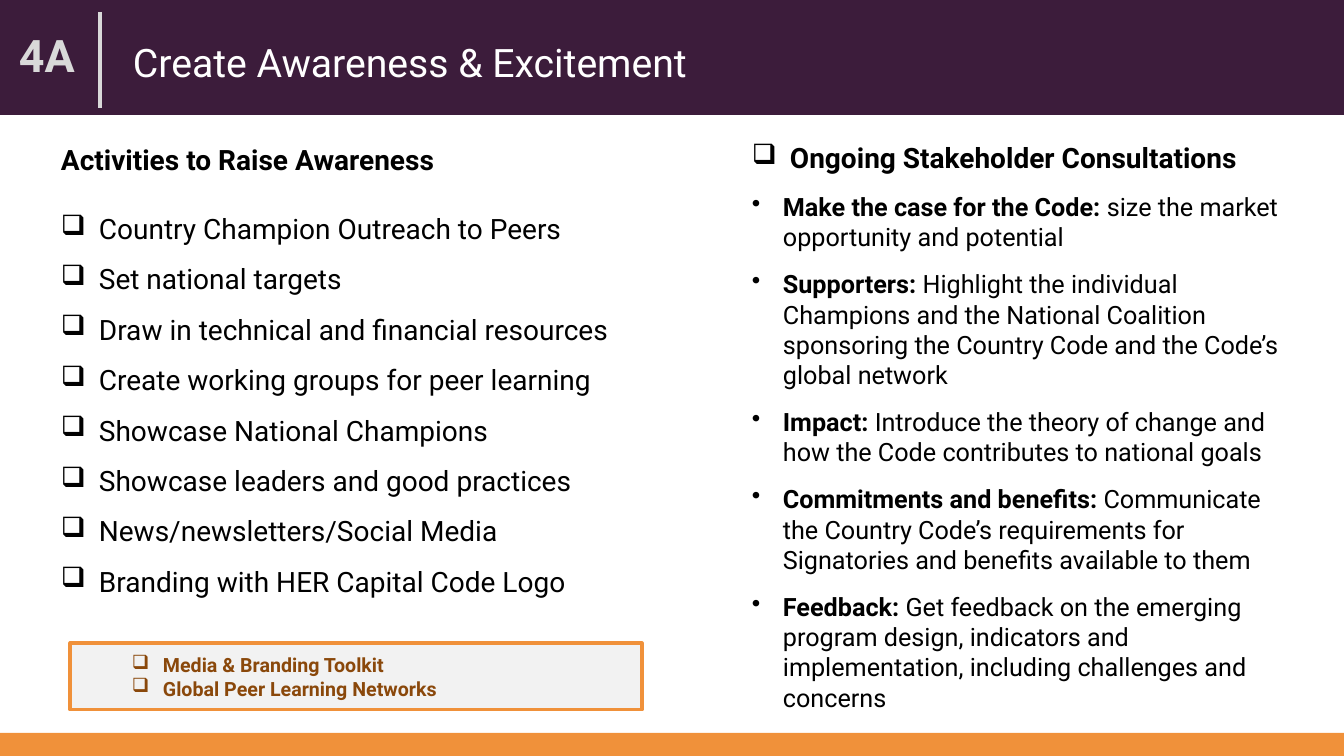
import pptx
import pptx.dml.color
import pptx.enum.shapes
import pptx.enum.text
import pptx.oxml.ns
import pptx.util
from lxml import etree

EMU_PER_PX = 914400 / 100.8
WHITE, BLACK, PLUM, ORANGE = "FFFFFF", "000000", "3C1C3B", "F0913A"
PALE, SILVER, BROWN = "F2F2F2", "D9D9D9", "8A480B"
CHECKBOX, DOT = "❑", "•"


def px(*lengths):
    return [pptx.util.Emu(round(n * EMU_PER_PX)) for n in lengths]


def write(frame, text, bold_lead="", size=20, color=BLACK, bold=False,
          bullet=None, indent=0, hanging=0, before=0, line_spacing=None):
    """Add one paragraph, filling the frame's first one while it is empty."""
    frame.word_wrap = True
    paragraph = frame.paragraphs[0]
    if paragraph.runs:
        paragraph = frame.add_paragraph()
    paragraph.alignment = pptx.enum.text.PP_ALIGN.LEFT
    paragraph.space_before = pptx.util.Pt(before)
    if line_spacing:
        paragraph.line_spacing = line_spacing
    left, hang = px(indent, hanging)
    properties = paragraph._p.get_or_add_pPr()
    properties.set("marL", str(left))
    properties.set("indent", str(-hang))
    if bullet:
        mark = etree.SubElement(properties, pptx.oxml.ns.qn("a:buChar"))
        mark.set("char", bullet)
    for words, is_bold in ((bold_lead, True), (text, bold)):
        if words:
            run = paragraph.add_run()
            run.text = words
            run.font.name = "Roboto"
            run.font.size = pptx.util.Pt(size)
            run.font.bold = is_bold
            run.font.color.rgb = pptx.dml.color.RGBColor.from_string(color)


deck = pptx.Presentation()
deck.slide_width, deck.slide_height = px(1344, 756)
slide = deck.slides.add_slide(deck.slide_layouts[6])
shapes = slide.shapes

# Footer band, header band and toolkit box
panels = []
for box, fill, outline in (
    ((0, 733, 1344, 23), ORANGE, None),
    ((0, 0, 1344, 115), PLUM, None),
    ((70, 643, 572, 67), PALE, ORANGE),
):
    panel = shapes.add_shape(pptx.enum.shapes.MSO_SHAPE.RECTANGLE, *px(*box))
    panel.shadow.inherit = False
    panel.fill.solid()
    panel.fill.fore_color.rgb = pptx.dml.color.RGBColor.from_string(fill)
    if outline:
        panel.line.color.rgb = pptx.dml.color.RGBColor.from_string(outline)
        panel.line.width = pptx.util.Pt(2.25)
    else:
        panel.line.fill.background()
    panels.append(panel)

toolkit = panels[-1].text_frame
toolkit.vertical_anchor = pptx.enum.text.MSO_ANCHOR.MIDDLE
for resource in ("Media & Branding Toolkit", "Global Peer Learning Networks"):
    write(toolkit, resource, size=14, color=BROWN, bold=True,
          bullet=CHECKBOX, indent=83, hanging=31)

# Header
title = shapes.add_textbox(*px(111, 0, 1214, 115)).text_frame
title.vertical_anchor = pptx.enum.text.MSO_ANCHOR.MIDDLE
write(title, "Create Awareness & Excitement", size=28, color=WHITE,
      indent=12, line_spacing=1.2)

section = shapes.add_textbox(*px(9, 23, 206, 65)).text_frame
write(section, "4A", size=32, color=SILVER, bold=True)

divider = shapes.add_connector(pptx.enum.shapes.MSO_CONNECTOR.STRAIGHT,
                               *px(100, 12, 100, 108))
divider.line.color.rgb = pptx.dml.color.RGBColor.from_string(SILVER)
divider.line.width = pptx.util.Pt(2.25)
etree.SubElement(divider._element.spPr, pptx.oxml.ns.qn("a:effectLst"))

# Left column
activities = shapes.add_textbox(*px(51, 138, 679, 482)).text_frame
write(activities, "Activities to Raise Awareness", bold=True, before=12)
for number, activity in enumerate((
    "Country Champion Outreach to Peers",
    "Set national targets",
    "Draw in technical and financial resources",
    "Create working groups for peer learning",
    "Showcase National Champions",
    "Showcase leaders and good practices",
    "News/newsletters/Social Media",
    "Branding with HER Capital Code Logo",
)):
    write(activities, activity, bullet=CHECKBOX, indent=38, hanging=38,
          before=12 if number else 25)

# Right column
consultations = shapes.add_textbox(*px(742, 136, 550, 584)).text_frame
write(consultations, "Ongoing Stakeholder Consultations", bold=True,
      bullet=CHECKBOX, indent=38, hanging=38, before=12)
for topic, advice in (
    ("Make the case for the Code:", "size the market opportunity and potential"),
    ("Supporters:", "Highlight the individual Champions and the National "
     "Coalition sponsoring the Country Code and the Code’s global network"),
    ("Impact:", "Introduce the theory of change and how the Code "
     "contributes to national goals"),
    ("Commitments and benefits:", "Communicate the Country Code’s "
     "requirements for Signatories and benefits available to them"),
    ("Feedback:", "Get feedback on the emerging program design, indicators "
     "and implementation, including challenges and concerns"),
):
    write(consultations, " " + advice, bold_lead=topic, size=18,
          bullet=DOT, indent=31, hanging=31, before=12)

deck.save("out.pptx")
